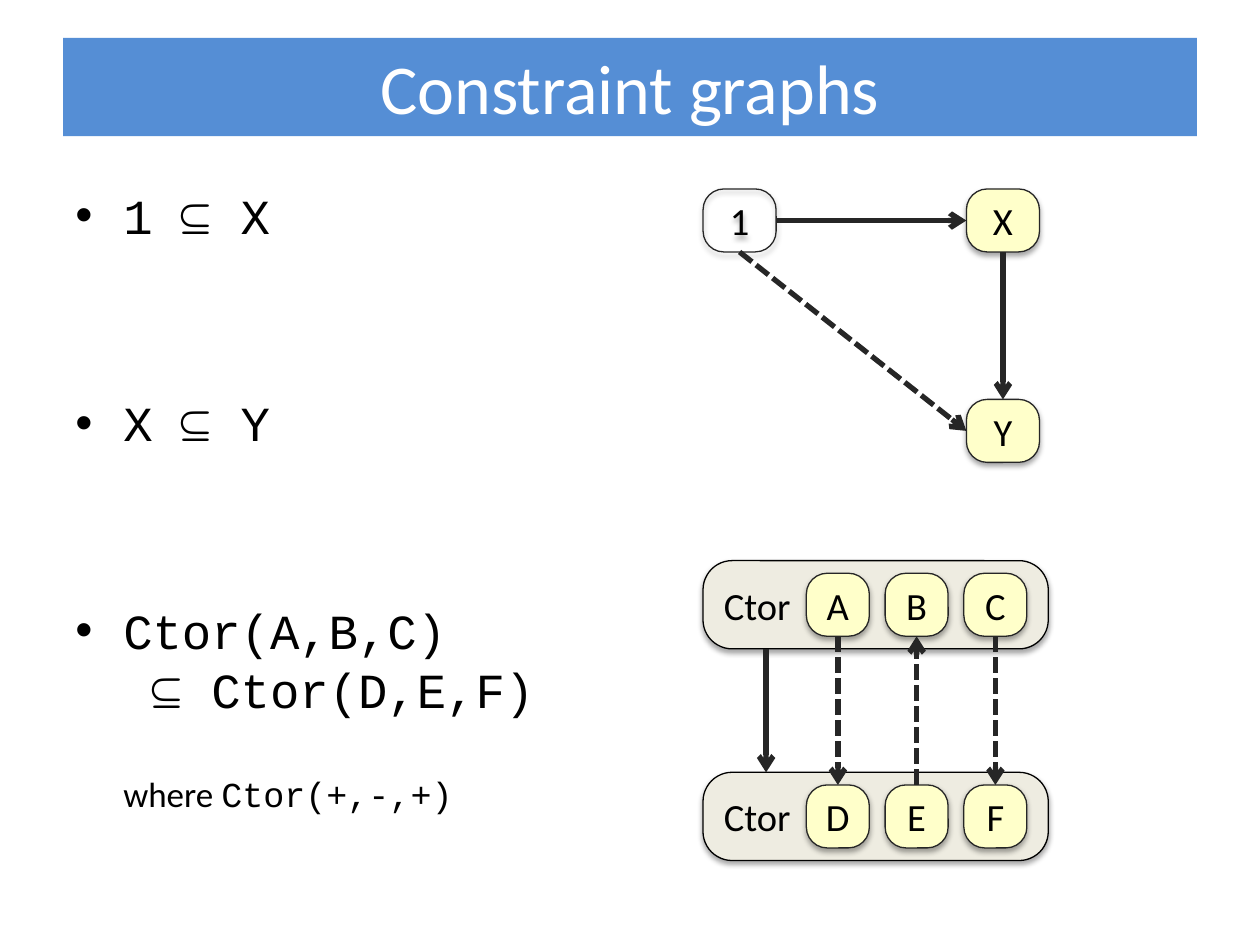
from dataclasses import dataclass

from lxml.etree import SubElement
from pptx import Presentation
from pptx.dml.color import RGBColor
from pptx.enum.dml import MSO_LINE
from pptx.enum.shapes import MSO_CONNECTOR, MSO_SHAPE
from pptx.enum.text import MSO_ANCHOR, PP_ALIGN
from pptx.oxml.ns import qn
from pptx.slide import Slide
from pptx.util import Inches, Pt

BLUE = RGBColor(0x55, 0x8E, 0xD5)
WHITE = RGBColor(0xFF, 0xFF, 0xFF)
BLACK = RGBColor(0x00, 0x00, 0x00)
CHARCOAL = RGBColor(0x26, 0x26, 0x26)
YELLOW = RGBColor(0xFF, 0xFF, 0xCA)
BEIGE = RGBColor(0xEE, 0xEC, 0xE1)

TOP, LEFT, BOTTOM, RIGHT = range(4)


@dataclass
class GraphPage:
    page: Slide
    body_font: str = "Calibri"
    code_font: str = "Courier New"
    label_size: int = 22

    def style_font(self, font, name, size, color=BLACK):
        font.name = name
        font.size = Pt(size)
        font.color.rgb = color

    def title(self, text):
        title = self.page.shapes.title
        title.left, title.top = Inches(0.5), Inches(0.3)
        title.width, title.height = Inches(9), Inches(0.78)
        title.fill.solid()
        title.fill.fore_color.rgb = BLUE
        frame = title.text_frame
        frame.text = text
        frame.vertical_anchor = MSO_ANCHOR.MIDDLE
        paragraph = frame.paragraphs[0]
        paragraph.alignment = PP_ALIGN.CENTER
        self.style_font(paragraph.font, self.body_font, 40, WHITE)

    def constraints(self, items, note):
        box = self.page.shapes.add_textbox(
            Inches(0.5), Inches(1.42), Inches(4.42), Inches(5.67))
        frame = box.text_frame
        frame.word_wrap = True
        for index, item in enumerate(items):
            para = frame.add_paragraph() if index else frame.paragraphs[0]
            para.text = item
            para.space_before = Pt(85 if index else 5.6)
            self.style_font(para.font, self.code_font, 28)
            self.indent(para, bullet=True)
        para = frame.add_paragraph()
        para.space_before = Pt(31)
        self.indent(para)
        for text, name in note:
            span = para.add_run()
            span.text = text
            self.style_font(span.font, name, 20)

    def indent(self, para, bullet=False):
        properties = para._p.get_or_add_pPr()
        properties.set("marL", str(Inches(0.38)))
        properties.set("indent", str(Inches(-0.38 if bullet else 0)))
        if bullet:
            SubElement(properties, qn("a:buFont"), typeface="Arial")
            SubElement(properties, qn("a:buChar"), char="•")

    def rounded_box(self, text, left, top, width, height, fill=YELLOW,
                    line=CHARCOAL, alignment=PP_ALIGN.CENTER):
        box = self.page.shapes.add_shape(
            MSO_SHAPE.ROUNDED_RECTANGLE,
            Inches(left), Inches(top), Inches(width), Inches(height))
        box.adjustments[0] = 0.33
        if fill is None:
            box.fill.background()
        else:
            box.fill.solid()
            box.fill.fore_color.rgb = fill
        box.line.color.rgb = line
        box.line.width = Pt(0.75)
        self.cast_shadow(box)
        frame = box.text_frame
        frame.text = text
        frame.word_wrap = alignment == PP_ALIGN.LEFT
        frame.vertical_anchor = MSO_ANCHOR.MIDDLE
        paragraph = frame.paragraphs[0]
        paragraph.alignment = alignment
        self.style_font(paragraph.font, self.body_font, self.label_size)
        return box

    def cast_shadow(self, box):
        box.shadow.inherit = False
        effects = box._element.spPr.find(qn("a:effectLst"))
        shadow = SubElement(
            effects, qn("a:outerShdw"), blurRad=str(Pt(3.1)),
            dist=str(Pt(1.8)), dir="5400000", rotWithShape="0")
        color = SubElement(shadow, qn("a:srgbClr"), val=str(BLACK))
        SubElement(color, qn("a:alpha"), val="35000")

    def constructor(self, names, top):
        outer = self.rounded_box("Ctor", 5.58, top, 2.74, 0.7, BEIGE, BLACK,
                                 PP_ALIGN.LEFT)
        arguments = [
            self.rounded_box(name, 6.4 + 0.625 * column, top + 0.1, 0.5, 0.5)
            for column, name in enumerate(names)]
        return outer, arguments

    def arrow(self, start=(0, 0), end=(0, 0), dashed=False):
        connector = self.page.shapes.add_connector(
            MSO_CONNECTOR.STRAIGHT,
            *(Inches(value) for value in (*start, *end)))
        connector.line.color.rgb = CHARCOAL
        connector.line.width = Pt(3)
        if dashed:
            connector.line.dash_style = MSO_LINE.SQUARE_DOT
        SubElement(connector.line._get_or_add_ln(), qn("a:tailEnd"),
                   type="arrow")
        SubElement(connector._element.spPr, qn("a:effectLst"))
        return connector

    def join(self, source, source_side, target, target_side, dashed=False):
        connector = self.arrow(dashed=dashed)
        connector.begin_connect(source, source_side)
        connector.end_connect(target, target_side)


def main():
    deck = Presentation()
    deck.slide_width, deck.slide_height = Inches(10), Inches(7.5)
    graph = GraphPage(deck.slides.add_slide(deck.slide_layouts[5]))

    graph.title("Constraint graphs")
    graph.constraints(
        ["1 ⊆ X", "X ⊆ Y", "Ctor(A,B,C)\v ⊆ Ctor(D,E,F)"],
        [("where ", graph.body_font), ("Ctor(+,-,+)", graph.code_font)])

    one = graph.rounded_box("1", 5.58, 1.5, 0.58, 0.5, fill=None)
    x_node = graph.rounded_box("X", 7.67, 1.5, 0.58, 0.5)
    y_node = graph.rounded_box("Y", 7.67, 3.17, 0.58, 0.5)
    graph.join(one, RIGHT, x_node, LEFT)
    graph.join(x_node, BOTTOM, y_node, TOP)
    graph.join(one, BOTTOM, y_node, LEFT, dashed=True)

    upper_top, lower_top = 4.45, 6.13
    upper, upper_arguments = graph.constructor("ABC", upper_top)
    lower, lower_arguments = graph.constructor("DEF", lower_top)
    graph.arrow((6.08, upper_top + 0.7), (6.08, lower_top))
    for above, below, variance in zip(upper_arguments, lower_arguments, "+-+"):
        if variance == "+":
            graph.join(above, BOTTOM, below, TOP, dashed=True)
        else:
            graph.join(below, TOP, above, BOTTOM, dashed=True)

    deck.save("out.pptx")


if __name__ == "__main__":
    main()
